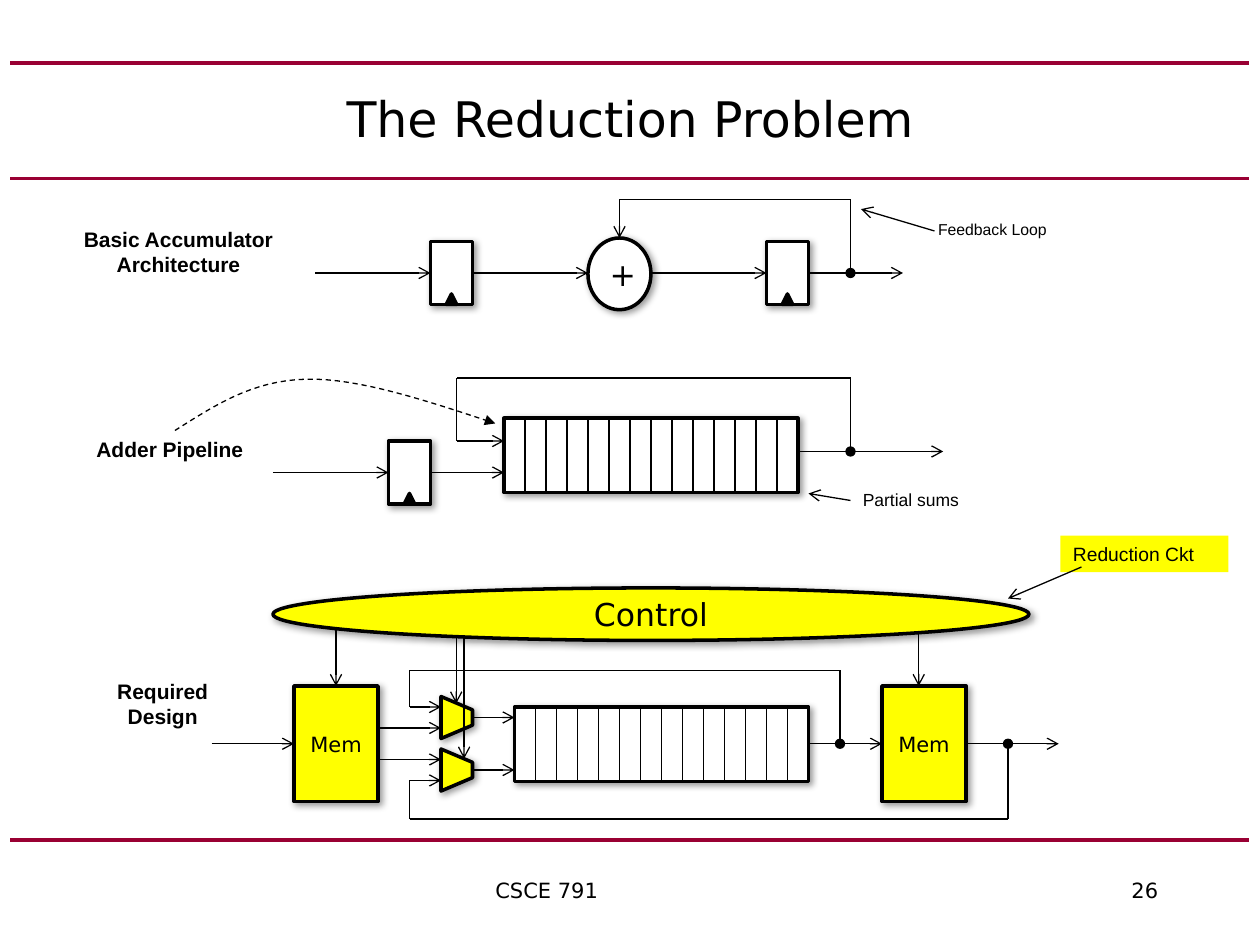
from itertools import pairwise

from lxml.etree import SubElement
from pptx import Presentation
from pptx.dml.color import RGBColor
from pptx.enum.dml import MSO_LINE
from pptx.enum.shapes import MSO_CONNECTOR, MSO_SHAPE
from pptx.enum.text import MSO_ANCHOR, MSO_AUTO_SIZE, PP_ALIGN
from pptx.oxml.ns import qn
from pptx.util import Pt

COLORS = {"rule": "990033", "ink": "000000", "paper": "FFFFFF", "new": "FFFF00"}
SANS, LABEL = "DejaVu Sans", "Arial"


def color(name):
    return RGBColor.from_string(COLORS[name])


def add_end(wire, end, kind):
    """Put an arrowhead or dot on one end ("head" or "tail") of a wire."""
    if kind:
        SubElement(wire.get_or_add_ln(), qn(f"a:{end}End"), type=kind)


def add_shadow(shape):
    effects = shape._element.spPr.find(qn("a:effectLst"))
    shadow = SubElement(effects, qn("a:outerShdw"), blurRad=str(Pt(4)),
                        dist=str(Pt(2)), dir="2700000", rotWithShape="0")
    black = SubElement(shadow, qn("a:srgbClr"), val=COLORS["ink"])
    SubElement(black, qn("a:alpha"), val="40000")


def write(frame, text, size, font, bold=False, align=PP_ALIGN.LEFT):
    frame.word_wrap = True
    frame.text = text
    paragraph = frame.paragraphs[0]
    paragraph.alignment = align
    for run in paragraph.runs:
        run.font.size, run.font.name, run.font.bold = Pt(size), font, bold
        run.font.color.rgb = color("ink")
    return paragraph


class Region:
    """Draws parts, in points, relative to its top left corner."""

    def __init__(self, slide, left, top):
        self.shapes, self.left, self.top = slide.shapes, left, top

    def at(self, x, y):
        return Pt(self.left + x), Pt(self.top + y)

    def block(self, kind, x, y, width, height, fill="paper", shadow=True, outline=True):
        shape = self.shapes.add_shape(kind, *self.at(x, y), Pt(width), Pt(height))
        shape.shadow.inherit = False
        shape.fill.solid()
        shape.fill.fore_color.rgb = color(fill)
        if outline:
            shape.line.color.rgb = color("ink")
            shape.line.width = Pt(2)
        else:
            shape.line.fill.background()
        if shadow:
            add_shadow(shape)
        return shape

    def named_block(self, kind, x, y, width, height, text, size, fill="paper"):
        shape = self.block(kind, x, y, width, height, fill)
        shape.text_frame.vertical_anchor = MSO_ANCHOR.MIDDLE
        write(shape.text_frame, text, size, SANS, align=PP_ALIGN.CENTER)

    def label(self, x, y, width, height, text, size, **style):
        box = self.shapes.add_textbox(*self.at(x, y), Pt(width), Pt(height))
        write(box.text_frame, text, size, LABEL, **style)
        box.text_frame.auto_size = MSO_AUTO_SIZE.SHAPE_TO_FIT_TEXT

    def wire(self, *points, head=None, tail="arrow", ink="ink", width=0.75):
        segments = list(pairwise(points))
        for i, (start, end) in enumerate(segments):
            segment = self.shapes.add_connector(
                MSO_CONNECTOR.STRAIGHT, *self.at(*start), *self.at(*end))
            segment.line.color.rgb = color(ink)
            segment.line.width = Pt(width)
            add_end(segment, "head", head if i == 0 else None)
            add_end(segment, "tail", tail if i == len(segments) - 1 else None)
            SubElement(segment._element.spPr, qn("a:effectLst"))

    def flow(self, x1, x2, y):
        self.wire((x1, y), (x2, y))

    def register(self, x, y):
        self.block(MSO_SHAPE.RECTANGLE, x, y, 24, 36)
        self.block(MSO_SHAPE.ISOSCELES_TRIANGLE, x + 9, y + 30, 6, 6, "ink", shadow=False)

    def pipeline(self, x, y, stages=14, stage=12, height=42.5):
        self.block(MSO_SHAPE.RECTANGLE, x, y, stages * stage, height)
        for i in range(1, stages):
            divider = x + i * stage
            self.wire((divider, y), (divider, y + height), tail=None)

    def dashed_curve(self, start, *beziers, steps=16):
        points = [start]
        for c1, c2, end in beziers:
            origin = points[-1]
            for t in (i / steps for i in range(1, steps + 1)):
                s = 1 - t
                points.append(tuple(
                    s**3 * a + 3 * s * s * t * b + 3 * s * t * t * c + t**3 * d
                    for a, b, c, d in zip(origin, c1, c2, end)))
        builder = self.shapes.build_freeform(*self.at(*start))
        builder.add_line_segments([self.at(*p) for p in points[1:]], close=False)
        curve = builder.convert_to_shape()
        curve.shadow.inherit = False
        curve.fill.background()
        curve.line.color.rgb = color("ink")
        curve.line.width = Pt(0.75)
        curve.line.dash_style = MSO_LINE.DASH
        add_end(curve, "tail", "triangle")


def slide_frame(page):
    for y in (36, 102, 480):
        page.wire((6, y), (714, y), tail=None, ink="rule", width=2.25)
    title = page.shapes.add_textbox(*page.at(36, 36), Pt(648), Pt(63)).text_frame
    title.vertical_anchor = MSO_ANCHOR.MIDDLE
    write(title, "The Reduction Problem", 28, SANS, align=PP_ALIGN.CENTER)
    # Course name and page number sit on two tab stops
    footer = page.shapes.add_textbox(*page.at(204, 498), Pt(504), Pt(24)).text_frame
    paragraph = write(footer, "\tCSCE 791\t26", 12, SANS)
    tabs = SubElement(paragraph._p.get_or_add_pPr(), qn("a:tabLst"))
    for stop in (72, 435.5):
        SubElement(tabs, qn("a:tab"), pos=str(Pt(stop)), algn="l")


def accumulator(region):
    region.label(0, 12, 132, 36, "Basic Accumulator Architecture", 12,
                 bold=True, align=PP_ALIGN.CENTER)
    for x in (210, 402):
        region.register(x, 24)
    region.named_block(MSO_SHAPE.OVAL, 300, 22, 36, 41, "+", 18)
    for x1, x2 in ((144, 210), (234, 300), (336, 402), (426, 480)):
        region.flow(x1, x2, 42)
    # Feedback loop
    region.wire((450, 42), (450, 0), (318, 0), (318, 22), head="oval")
    region.label(493, 8, 78, 18, "Feedback Loop", 9)
    region.wire((498, 18), (456, 5.5))


def adder_pipeline(region):
    region.label(0, 30, 132, 22, "Adder Pipeline", 12, bold=True)
    region.register(174, 36)
    region.pipeline(240, 23)
    for x1, x2, y in ((108, 174, 54), (198, 240, 54), (408, 491, 42)):
        region.flow(x1, x2, y)
    region.wire((438, 42), (438, 0), (213, 0), (213, 36), (240, 36), head="oval")
    # Pointers
    region.dashed_curve((52, 30), ((74.3, 16), (96, 1.4), (127, 0.7)),
                        ((157, 0), (196, 13), (235, 26)))
    region.label(438, 60, 72, 19, "Partial sums", 10)
    region.wire((438, 70), (414, 66))


def required_design(region):
    region.label(0, 78, 78, 36, "Required Design", 12, bold=True, align=PP_ALIGN.CENTER)
    region.named_block(MSO_SHAPE.OVAL, 102, 30, 432, 30, "Control", 18, "new")
    for x in (114, 450):
        region.named_block(MSO_SHAPE.RECTANGLE, x, 86, 48, 66, "Mem", 12, "new")
    region.pipeline(240, 98)
    # Multiplexers
    for y in (95, 125):
        mux = region.block(MSO_SHAPE.TRAPEZOID, 195, y, 24, 18, "new")
        mux.rotation = 90
        mux.adjustments[0] = 0.424
        region.flow(216, 240, y + 9)
    # Data path
    for x1, x2, y in ((67, 114, 119), (162, 198, 110), (162, 198, 128),
                      (408, 450, 119), (498, 551, 119)):
        region.flow(x1, x2, y)
    region.wire((426, 119), (426, 77), (180, 77), (180, 98), (198, 98), head="oval")
    region.wire((522, 119), (522, 162), (180, 162), (180, 140), (198, 140), head="oval")
    # Control signals
    for x, y1, y2 in ((138, 54, 86), (206.7, 58, 96), (211.2, 58, 127.5), (471, 55, 86)):
        region.wire((x, y1), (x, y2))
    # Callout
    callout = region.block(MSO_SHAPE.RECTANGLE, 552, 0, 96, 21, "new",
                           shadow=False, outline=False)
    write(callout.text_frame, "Reduction Ckt", 11, LABEL)
    region.wire((564, 18), (522, 36))


def main():
    prs = Presentation()
    prs.slide_width, prs.slide_height = Pt(720), Pt(540)
    slide = prs.slides.add_slide(prs.slide_layouts[6])
    slide_frame(Region(slide, 0, 0))
    accumulator(Region(slide, 36, 114))
    adder_pipeline(Region(slide, 48, 216))
    required_design(Region(slide, 54, 306))
    prs.save("out.pptx")


if __name__ == "__main__":
    main()
